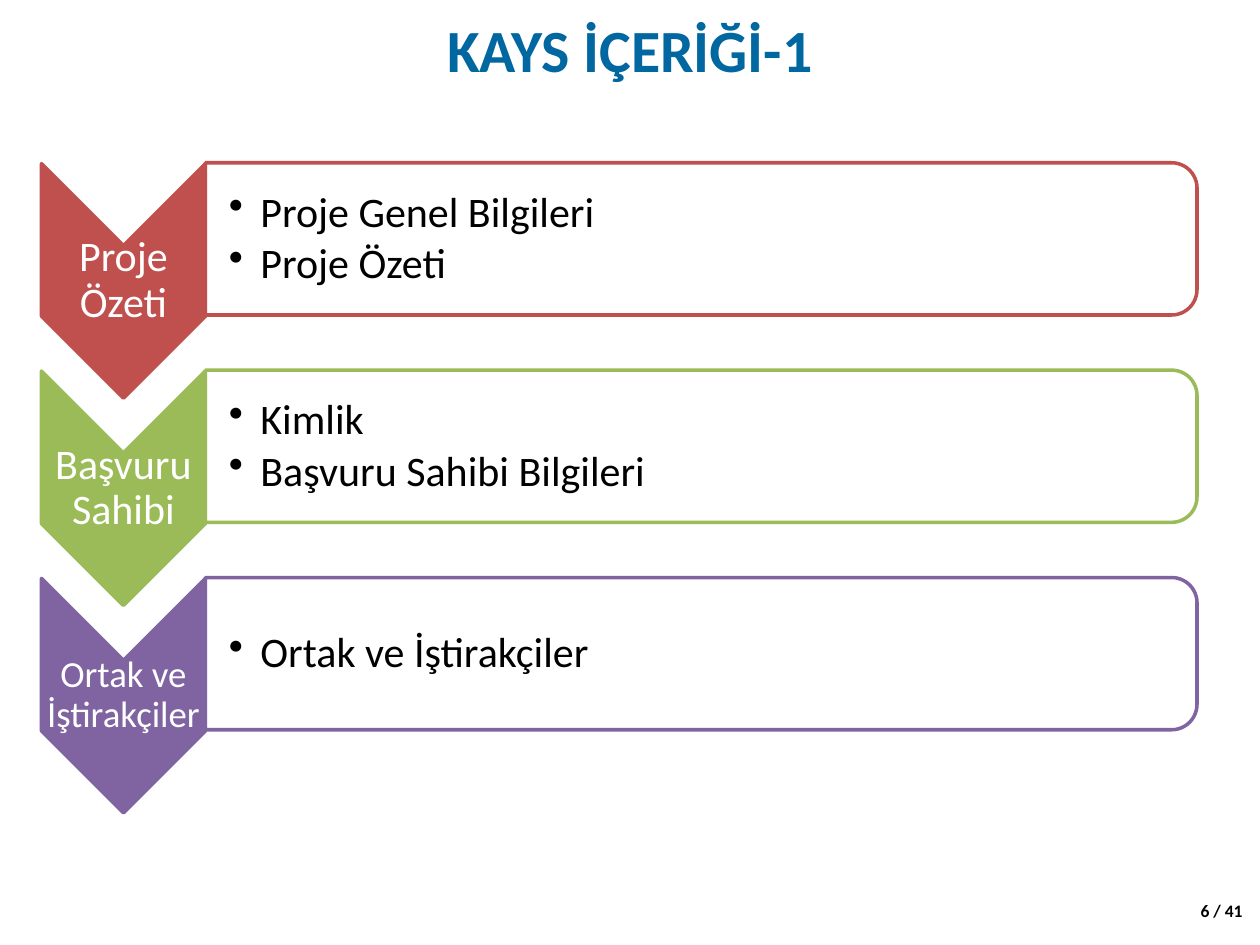
from lxml import etree
from pptx import Presentation
from pptx.dml.color import RGBColor
from pptx.enum.shapes import MSO_SHAPE
from pptx.enum.text import MSO_ANCHOR, PP_ALIGN
from pptx.oxml.ns import qn
from pptx.util import Pt

CHEVRON = MSO_SHAPE.CHEVRON
PANEL = MSO_SHAPE.ROUND_2_SAME_RECTANGLE
LEFT, CENTER = PP_ALIGN.LEFT, PP_ALIGN.CENTER
TOP, MIDDLE = MSO_ANCHOR.TOP, MSO_ANCHOR.MIDDLE

COLORS = {
    "title": "0067A0", "black": "000000", "white": "FFFFFF",
    "red": "C0504D", "green": "9BBB59", "purple": "8064A2",
}

# Rows: colour, label, label size, label inset, bullets
ROWS = [
    ("red", "Proje Özeti", 24, 1.2, ["Proje Genel Bilgileri", "Proje Özeti"]),
    ("green", "Başvuru Sahibi", 24, 1.2, ["Kimlik", "Başvuru Sahibi Bilgileri"]),
    ("purple", "Ortak ve İştirakçiler", 21, 1, ["Ortak ve İştirakçiler"]),
]
ROW_TOP, ROW_PITCH = 93, 118.5
LABEL_X, LABEL_W = 23.7, 93.7
PANEL_X = LABEL_X + LABEL_W


def rgb(name):
    return RGBColor.from_string(COLORS[name])


class SlideBuilder:
    font = "Calibri"

    def __init__(self, slide):
        self.s = slide

    def turned_shape(self, kind, x, y, w, h, fill, line, alpha=None):
        """Shape turned by 90 degrees that covers the box x, y, w, h."""
        shift = (w - h) / 2
        sp = self.s.shapes.add_shape(kind, Pt(x + shift), Pt(y - shift), Pt(h), Pt(w))
        sp.rotation = 90
        sp.shadow.inherit = False
        sp.fill.solid()
        sp.fill.fore_color.rgb = rgb(fill)
        sp.line.color.rgb = rgb(line)
        sp.line.width = Pt(2)
        if alpha:
            color = sp.fill._xPr.find(qn("a:solidFill"))[0]
            etree.SubElement(color, qn("a:alpha"), val=str(alpha * 1000))

    def text(self, x, y, w, h, lines, size, color, bold=False, align=LEFT, anchor=MIDDLE,
             insets=(7.2, 3.6, 7.2, 3.6), spacing=None, after=0, bullet=False, outline=None):
        tf = self.s.shapes.add_textbox(Pt(x), Pt(y), Pt(w), Pt(h)).text_frame
        tf.word_wrap = True
        tf.vertical_anchor = anchor
        tf.margin_left, tf.margin_top, tf.margin_right, tf.margin_bottom = map(Pt, insets)
        for i, line in enumerate(lines):
            p = tf.add_paragraph() if i else tf.paragraphs[0]
            p.alignment = align
            p.line_spacing = spacing
            p.space_after = Pt(after)
            if bullet:
                self.bullet(p)
            r = p.add_run()
            r.text = line
            r.font.name, r.font.size, r.font.bold = self.font, Pt(size), bold
            r.font.color.rgb = rgb(color)
            if outline:
                self.outline(r, color, outline)

    def bullet(self, p):
        pPr = p._p.get_or_add_pPr()
        pPr.set("marL", str(Pt(18)))
        pPr.set("indent", str(-Pt(18)))
        etree.SubElement(pPr, qn("a:buChar"), char="•")

    def outline(self, r, color, width):
        ln = etree.Element(qn("a:ln"), w=str(Pt(width)))
        fill = etree.SubElement(ln, qn("a:solidFill"))
        etree.SubElement(fill, qn("a:srgbClr"), val=COLORS[color])
        r._r.get_or_add_rPr().insert(0, ln)


def main():
    prs = Presentation()
    prs.slide_width, prs.slide_height = Pt(720), Pt(540)
    b = SlideBuilder(prs.slides.add_slide(prs.slide_layouts[6]))

    # Page number and title
    b.text(679, 511, 49, 21.6, ["6 / 41"], 10, "black", bold=True, anchor=TOP)
    b.text(36, 5, 648, 45.4, ["KAYS İÇERİĞİ-1"], 34.2, "title", bold=True,
           align=CENTER, outline=0.75)

    # Chevron list
    for i, (color, label, size, inset, bullets) in enumerate(ROWS):
        y = ROW_TOP + i * ROW_PITCH
        b.turned_shape(CHEVRON, LABEL_X, y + 0.5, LABEL_W, 134, color, color)
        b.text(LABEL_X, y + 47.4, LABEL_W, 40.2, [label], size, "white", align=CENTER,
               insets=[inset] * 4, spacing=0.9, after=size * 0.35)
        b.turned_shape(PANEL, PANEL_X, y, 566.6, 87, "white", color, alpha=90)
        b.text(PANEL_X, y + 4.5, 562.3, 78.5, bullets, 24, "black",
               insets=(13.4, 1.2, 1.2, 1.2), spacing=0.9, after=3.6, bullet=True)

    prs.save("out.pptx")


if __name__ == "__main__":
    main()
